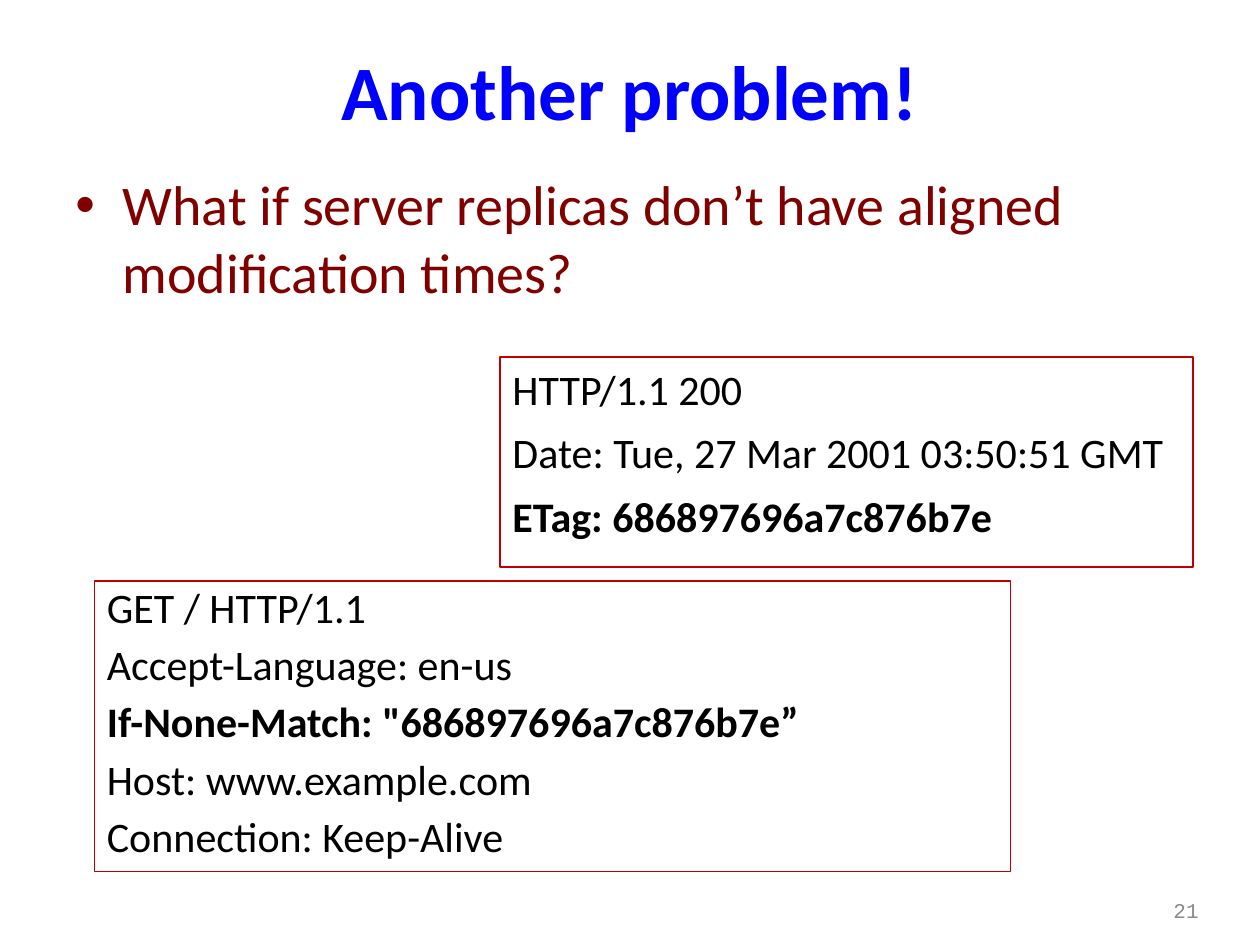
from lxml import etree
from pptx import Presentation
from pptx.dml.color import RGBColor
from pptx.enum import shapes, text
from pptx.oxml.ns import qn
from pptx.util import Pt

BLUE = RGBColor(0x00, 0x00, 0xFF)
MAROON = RGBColor(0x80, 0x00, 0x00)
RED = RGBColor(0xC0, 0x00, 0x00)
BLACK = RGBColor(0x00, 0x00, 0x00)
GREY = RGBColor(0x89, 0x89, 0x89)

HANGING_INDENT = 27


def format_paragraph(paragraph, size, color, bold=False, font="Calibri",
                     alignment=text.PP_ALIGN.LEFT):
    paragraph.alignment = alignment
    for run in paragraph.runs:
        run.font.name = font
        run.font.size = Pt(size)
        run.font.bold = bold
        run.font.color.rgb = color


def hang(paragraph, bullet=None, color=None):
    """Hang the first line to the left of the others, with a bullet if given."""
    properties = paragraph._p.get_or_add_pPr()
    properties.set("marL", str(Pt(HANGING_INDENT)))
    properties.set("indent", str(-Pt(HANGING_INDENT)))
    if bullet is None:
        etree.SubElement(properties, qn("a:buNone"))
        return
    bullet_color = etree.SubElement(properties, qn("a:buClr"))
    etree.SubElement(bullet_color, qn("a:srgbClr"), val=str(color))
    etree.SubElement(properties, qn("a:buFont"), typeface="Arial")
    etree.SubElement(properties, qn("a:buChar"), char=bullet)


def add_text(slide, box, content, anchor=text.MSO_ANCHOR.TOP):
    """Add a wrapping one-paragraph text box and return its paragraph."""
    frame = slide.shapes.add_textbox(*map(Pt, box)).text_frame
    frame.word_wrap = True
    frame.vertical_anchor = anchor
    frame.text = content
    return frame.paragraphs[0]


def add_title(slide, box, content):
    paragraph = add_text(slide, box, content, text.MSO_ANCHOR.MIDDLE)
    format_paragraph(paragraph, 44, BLUE, bold=True,
                     alignment=text.PP_ALIGN.CENTER)


def add_question(slide, box, content):
    paragraph = add_text(slide, box, content)
    format_paragraph(paragraph, 32, MAROON)
    paragraph.space_before = Pt(8)
    hang(paragraph, "•", MAROON)


def add_page_number(slide, box, content):
    paragraph = add_text(slide, box, content, text.MSO_ANCHOR.MIDDLE)
    format_paragraph(paragraph, 12, GREY, font="Courier New",
                     alignment=text.PP_ALIGN.RIGHT)


def add_message(slide, box, lines, bold_line, space_before, line_spacing=1.0):
    """Add a framed HTTP message whose line at index bold_line is bold."""
    frame_shape = slide.shapes.add_shape(shapes.MSO_SHAPE.RECTANGLE,
                                         *map(Pt, box))
    frame_shape.shadow.inherit = False
    frame_shape.fill.background()
    frame_shape.line.color.rgb = RED
    frame_shape.line.width = Pt(0.75)
    frame = frame_shape.text_frame
    frame.word_wrap = True
    frame.vertical_anchor = text.MSO_ANCHOR.TOP
    frame.text = "\n".join(lines)
    for index, paragraph in enumerate(frame.paragraphs):
        format_paragraph(paragraph, 24, BLACK, bold=index == bold_line)
        paragraph.space_before = Pt(space_before)
        paragraph.line_spacing = line_spacing
        hang(paragraph)


def main():
    presentation = Presentation()
    presentation.slide_width = Pt(720)
    presentation.slide_height = Pt(540)
    slide = presentation.slides.add_slide(presentation.slide_layouts[6])

    add_title(slide, (36, 6, 648, 90), "Another problem!")
    add_message(slide, (54, 332, 523.5, 166), [
        "GET / HTTP/1.1",
        "Accept-Language: en-us",
        'If-None-Match: "686897696a7c876b7e”',
        "Host: www.example.com",
        "Connection: Keep-Alive",
    ], bold_line=2, space_before=6.8, line_spacing=0.9)
    add_page_number(slide, (519, 502, 173, 36), "21")
    add_question(slide, (36, 93.6, 678, 102),
                 "What if server replicas don’t have aligned modification times?")
    add_message(slide, (285.8, 204, 396, 120), [
        "HTTP/1.1 200",
        "Date: Tue, 27 Mar 2001 03:50:51 GMT",
        "ETag: 686897696a7c876b7e",
    ], bold_line=2, space_before=7.5)

    presentation.save("out.pptx")


if __name__ == "__main__":
    main()
